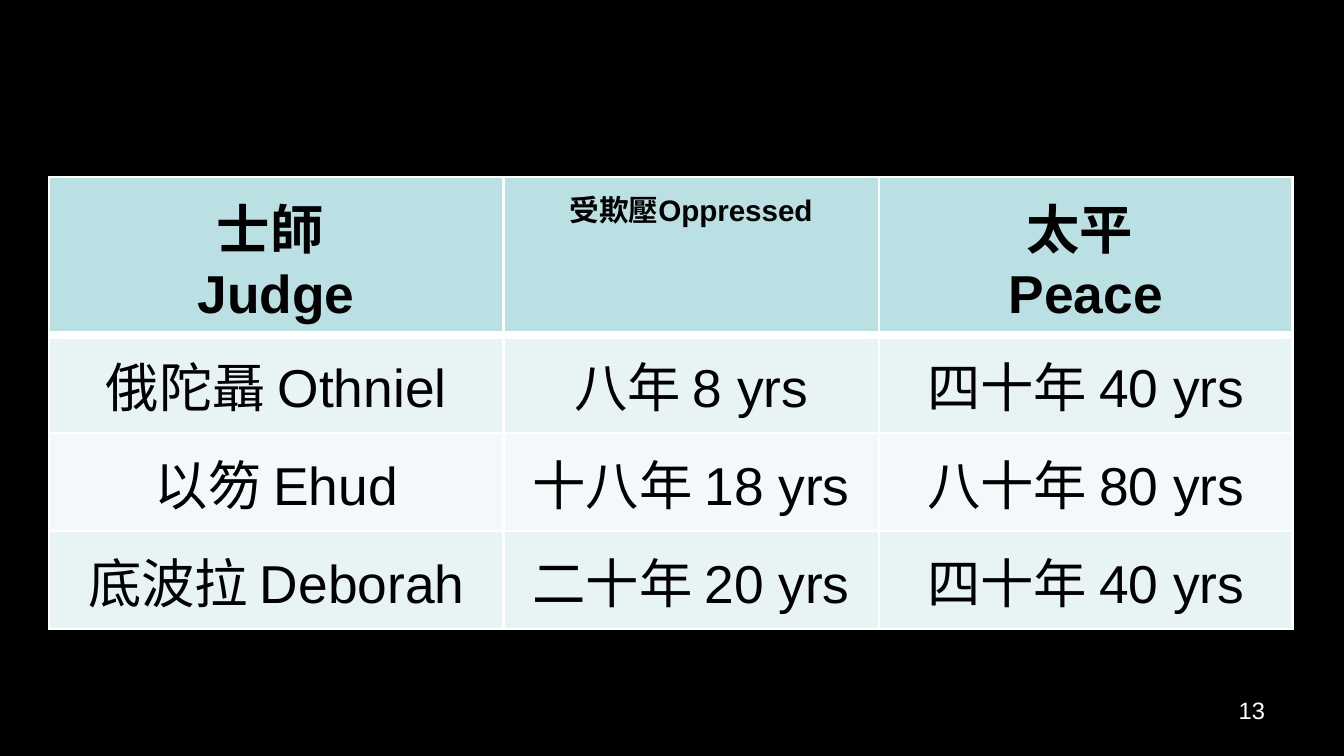
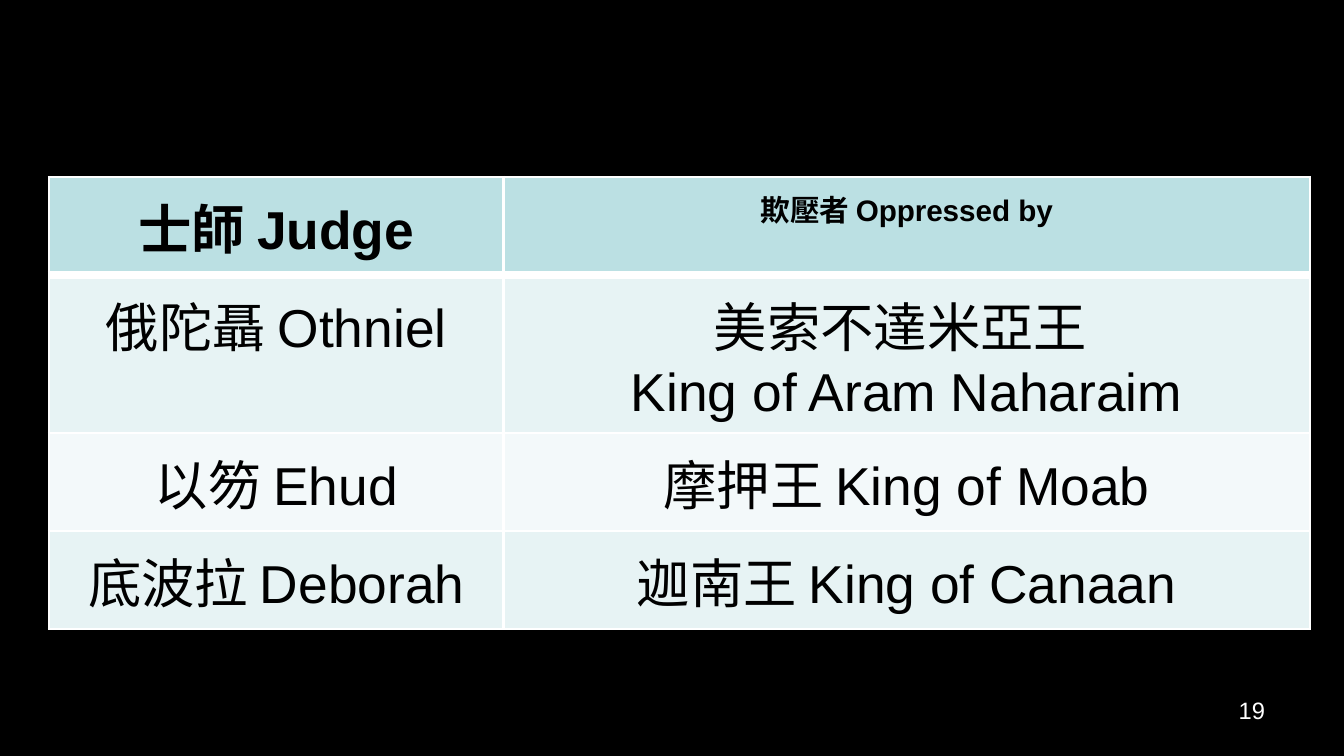
from lxml.etree import SubElement
from pptx import Presentation
from pptx.dml.color import RGBColor
from pptx.enum.text import PP_ALIGN
from pptx.oxml.ns import qn
from pptx.util import Inches, Pt

WHITE, BLACK = "FFFFFF", "000000"
HEADER, BAND, PALE = "BBE0E3", "E7F3F4", "F3F9FA"
ROW_FILLS = [HEADER, BAND, PALE, BAND]
LINE_H, TWO_LINE_H = 0.46, 0.74

SLIDES = [
    {
        "number": "13",
        "cols": [2.13, 1.76, 1.94],
        "two_line_row": 0,
        "rows": [
            [("士師 ", "\nJudge"), ("受欺壓", "Oppressed"), ("太平 ", "\nPeace")],
            [("俄陀聶 ", "Othniel"), ("八年 ", "8 yrs"), ("四十年 ", "40 yrs")],
            [("以笏 ", "Ehud"), ("十八年 ", "18 yrs"), ("八十年 ", "80 yrs")],
            [("底波拉", " Deborah"), ("二十年 ", "20 yrs"), ("四十年 ", "40 yrs")],
        ],
    },
    {
        "number": "19",
        "cols": [2.13, 3.78],
        "two_line_row": 1,
        "rows": [
            [("士師 ", "Judge"), ("欺壓者 ", "Oppressed by")],
            [("俄陀聶 ", "Othniel"), ("美索不達米亞王 ", "\vKing of Aram Naharaim")],
            [("以笏 ", "Ehud"), ("摩押王 ", "King of Moab")],
            [("底波拉", " Deborah"), ("迦南王 ", "King of Canaan")],
        ],
    },
]


def rgb(color):
    return RGBColor.from_string(color)


def add_run(p, text, font, size, color, bold=False):
    r = p.add_run()
    r.text = text
    r.font.name = font
    r.font.size = Pt(size)
    r.font.bold = bold
    r.font.color.rgb = rgb(color)


prs = Presentation()
prs.slide_width, prs.slide_height = Inches(6.3), Inches(6.3 * 9 / 16)
fill = prs.slide_master.background.fill
fill.solid()
fill.fore_color.rgb = rgb(BLACK)

for data in SLIDES:
    s = prs.slides.add_slide(prs.slide_layouts[6])

    tf = s.shapes.add_textbox(Inches(4.52), Inches(3.23), Inches(1.47), Inches(0.24)).text_frame
    tf.word_wrap = True
    tf.margin_left = tf.margin_right = Inches(0.06)
    tf.margin_top = tf.margin_bottom = Inches(0.03)
    p = tf.paragraphs[0]
    p.alignment = PP_ALIGN.RIGHT
    add_run(p, data["number"], "Arial", 8, WHITE)

    cols, rows = data["cols"], data["rows"]
    heights = [TWO_LINE_H if i == data["two_line_row"] else LINE_H for i in range(len(rows))]
    table = s.shapes.add_table(len(rows), len(cols), Inches(0.23), Inches(0.83),
                               Inches(sum(cols)), Inches(sum(heights))).table
    table.first_row = table.horz_banding = False
    for column, width in zip(table.columns, cols):
        column.width = Inches(width)

    for i, row in enumerate(rows):
        table.rows[i].height = Inches(heights[i])
        for j, (chinese, english) in enumerate(row):
            cell = table.cell(i, j)
            cell.margin_left = cell.margin_right = Inches(0.06)
            widths = {"lnL": 1, "lnR": 1, "lnT": 3 if i == 1 else 1, "lnB": 3 if i == 0 else 1}
            tcPr = cell._tc.get_or_add_tcPr()
            for side, width in widths.items():
                ln = SubElement(tcPr, qn(f"a:{side}"), w=str(Pt(width)))
                SubElement(SubElement(ln, qn("a:solidFill")), qn("a:srgbClr"), val=WHITE)
            cell.fill.solid()
            cell.fill.fore_color.rgb = rgb(ROW_FILLS[i])

            size = 10 if (i, j) == (0, 1) else 18
            p = cell.text_frame.paragraphs[0]
            p.alignment = PP_ALIGN.CENTER
            add_run(p, chinese, "Roboto", size, BLACK, i == 0)
            if english.startswith("\n"):
                p = cell.text_frame.add_paragraph()
                p.alignment = PP_ALIGN.CENTER
            elif english.startswith("\v"):
                p.add_line_break()
            add_run(p, english.lstrip("\n\v"), "Arial", size, BLACK, i == 0)

prs.save("out.pptx")
